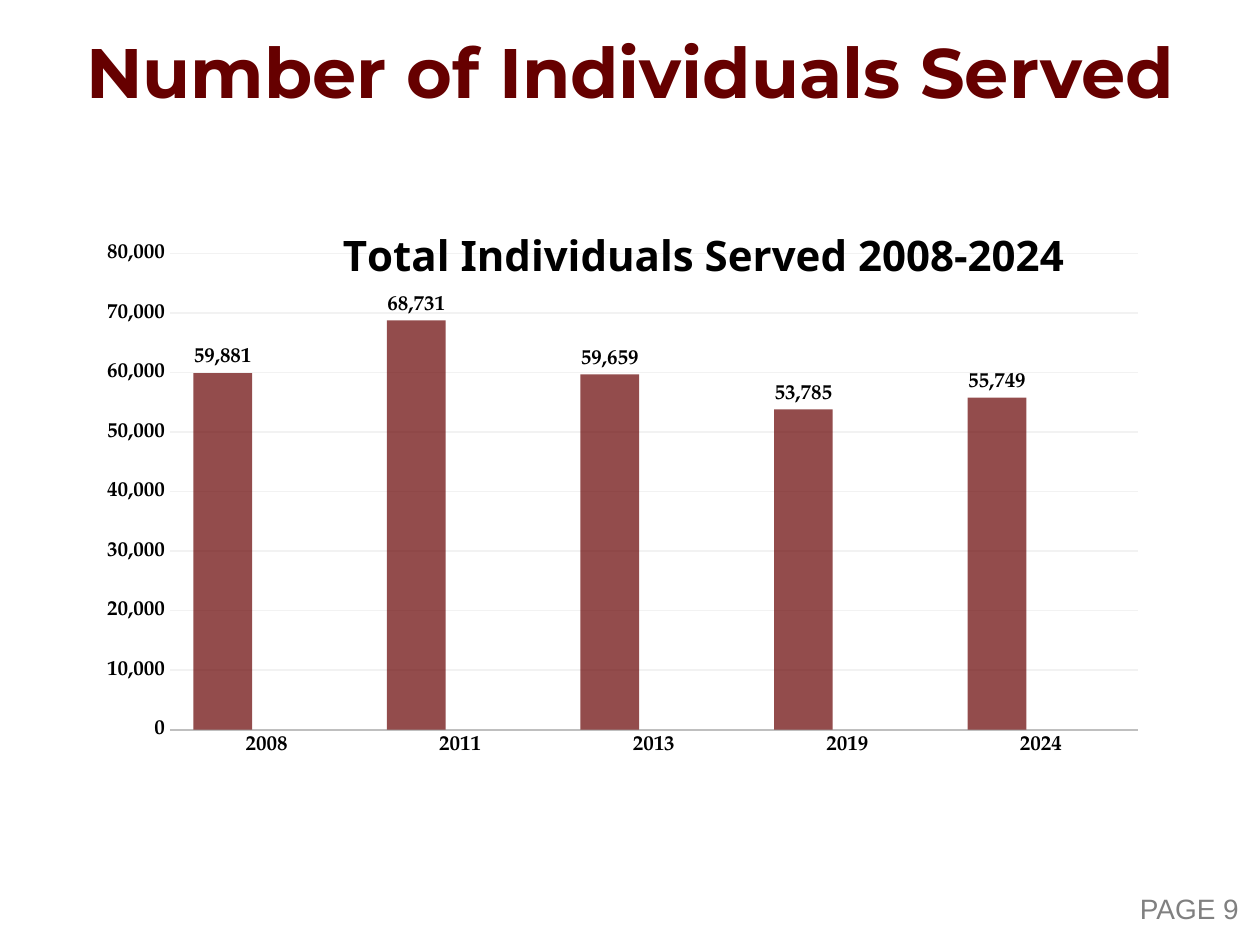
"""Build the slide showing the number of individuals served, 2008-2024."""
import pptx
import pptx.chart.data
import pptx.dml.color
import pptx.enum.chart
import pptx.enum.text
import pptx.oxml
import pptx.oxml.ns
import pptx.util

Inches, Pt = pptx.util.Inches, pptx.util.Pt
ALIGN, ANCHOR = pptx.enum.text.PP_ALIGN, pptx.enum.text.MSO_ANCHOR

HEADING = "Number of Individuals Served"
PAGE = "PAGE 9"
CHART_TITLE = "Total Individuals Served 2008-2024"
YEARS = ["2008", "2011", "2013", "2019", "2024"]
SERVED = [
    ("Series 1", [59881, 68731, 59659, 53785, 55749], "maroon"),
    ("Series 2", [None] * len(YEARS), "olive"),
    ("Series 3", [None] * len(YEARS), "brown"),
]
COLORS = {
    "maroon": "660000", "olive": "757871", "brown": "6E4C1E", "black": "000000",
    "gray": "808080", "axis": "BFBFBF", "grid": "F2F2F2",
}
CHART_FONT = "TeX Gyre Pagella"
CHART_BOX = (0.84, 1.53, 8.47, 5.66)
PLOT_LAYOUT = {"x": 0.06, "y": 0.085, "w": 0.907, "h": 0.668}
TITLE_LAYOUT = {"x": 0.215, "y": 0.03}


def color(name):
    return pptx.dml.color.RGBColor.from_string(COLORS[name])


def style(font, name, size, hue, bold):
    font.name, font.size, font.bold = name, Pt(size), bold
    font.color.rgb = color(hue)


def add_text(slide, box, text, align, anchor, *look):
    frame = slide.shapes.add_textbox(*map(Inches, box)).text_frame
    frame.word_wrap = True
    frame.vertical_anchor = anchor
    paragraph = frame.paragraphs[0]
    paragraph.alignment = align
    run = paragraph.add_run()
    run.text = text
    style(run.font, *look)


def layout_xml(places, inner=False):
    target = '<c:layoutTarget val="inner"/>' if inner else ""
    modes = "".join(f'<c:{key}Mode val="edge"/>' for key in places if key in "xy")
    values = "".join(f'<c:{key} val="{value}"/>' for key, value in places.items())
    return pptx.oxml.parse_xml(
        f'<c:layout {pptx.oxml.ns.nsdecls("c")}><c:manualLayout>'
        f"{target}{modes}{values}</c:manualLayout></c:layout>")


def place(parent, layout, index):
    for old in parent.findall(pptx.oxml.ns.qn("c:layout")):
        parent.remove(old)
    parent.insert(index, layout)


def add_served_chart(slide):
    data = pptx.chart.data.CategoryChartData(number_format="#,##0")
    data.categories = YEARS
    for name, values, _ in SERVED:
        data.add_series(name, values)
    chart = slide.shapes.add_chart(
        pptx.enum.chart.XL_CHART_TYPE.COLUMN_CLUSTERED, *map(Inches, CHART_BOX), data).chart
    style(chart.font, CHART_FONT, 10, "black", False)
    chart.has_legend = False

    chart.has_title = True
    run = chart.chart_title.text_frame.paragraphs[0].add_run()
    run.text = CHART_TITLE
    style(run.font, "Century Gothic", 24, "black", True)
    place(chart.chart_title._element, layout_xml(TITLE_LAYOUT), 1)
    chart.chart_title.include_in_layout = True
    place(chart._chartSpace.chart.plotArea, layout_xml(PLOT_LAYOUT, True), 0)

    for axis in (chart.category_axis, chart.value_axis):
        axis.major_tick_mark = axis.minor_tick_mark = pptx.enum.chart.XL_TICK_MARK.NONE
        style(axis.tick_labels.font, CHART_FONT, 12, "black", True)
    years, counts = chart.category_axis, chart.value_axis
    years.format.line.color.rgb = color("axis")
    years.format.line.width = Pt(1.25)
    counts.format.line.fill.background()
    counts.minimum_scale, counts.maximum_scale, counts.major_unit = 0, 80000, 10000
    counts.tick_labels.number_format = "#,##0"
    counts.tick_labels.number_format_is_linked = False
    counts.major_gridlines.format.line.color.rgb = color("grid")
    counts.major_gridlines.format.line.width = Pt(0.75)

    plot = chart.plots[0]
    plot.gap_width, plot.overlap, plot.vary_by_categories = 80, 25, False
    for series, (_, _, hue) in zip(plot.series, SERVED):
        series.format.fill.solid()
        series.format.fill.fore_color.rgb = color(hue)
        for rgb in series._element.spPr.iter(pptx.oxml.ns.qn("a:srgbClr")):
            rgb.append(pptx.oxml.parse_xml(
                f'<a:alpha {pptx.oxml.ns.nsdecls("a")} val="70000"/>'))
        labels = series.data_labels
        labels.show_value = True
        labels.position = pptx.enum.chart.XL_LABEL_POSITION.OUTSIDE_END
        style(labels.font, CHART_FONT, 12, "black", True)


def main():
    deck = pptx.Presentation()
    deck.slide_width, deck.slide_height = Inches(10), Inches(7.5)
    slide = deck.slides.add_slide(deck.slide_layouts[6])
    add_text(slide, (8.33, 7.03, 1.6, 0.37), PAGE, ALIGN.RIGHT, ANCHOR.TOP,
             "Arial", 16, "gray", False)
    add_text(slide, (0.05, 0.07, 9.9, 0.98), HEADING, ALIGN.CENTER, ANCHOR.MIDDLE,
             "Montserrat", 40, "maroon", True)
    add_served_chart(slide)
    deck.save("out.pptx")


if __name__ == "__main__":
    main()
